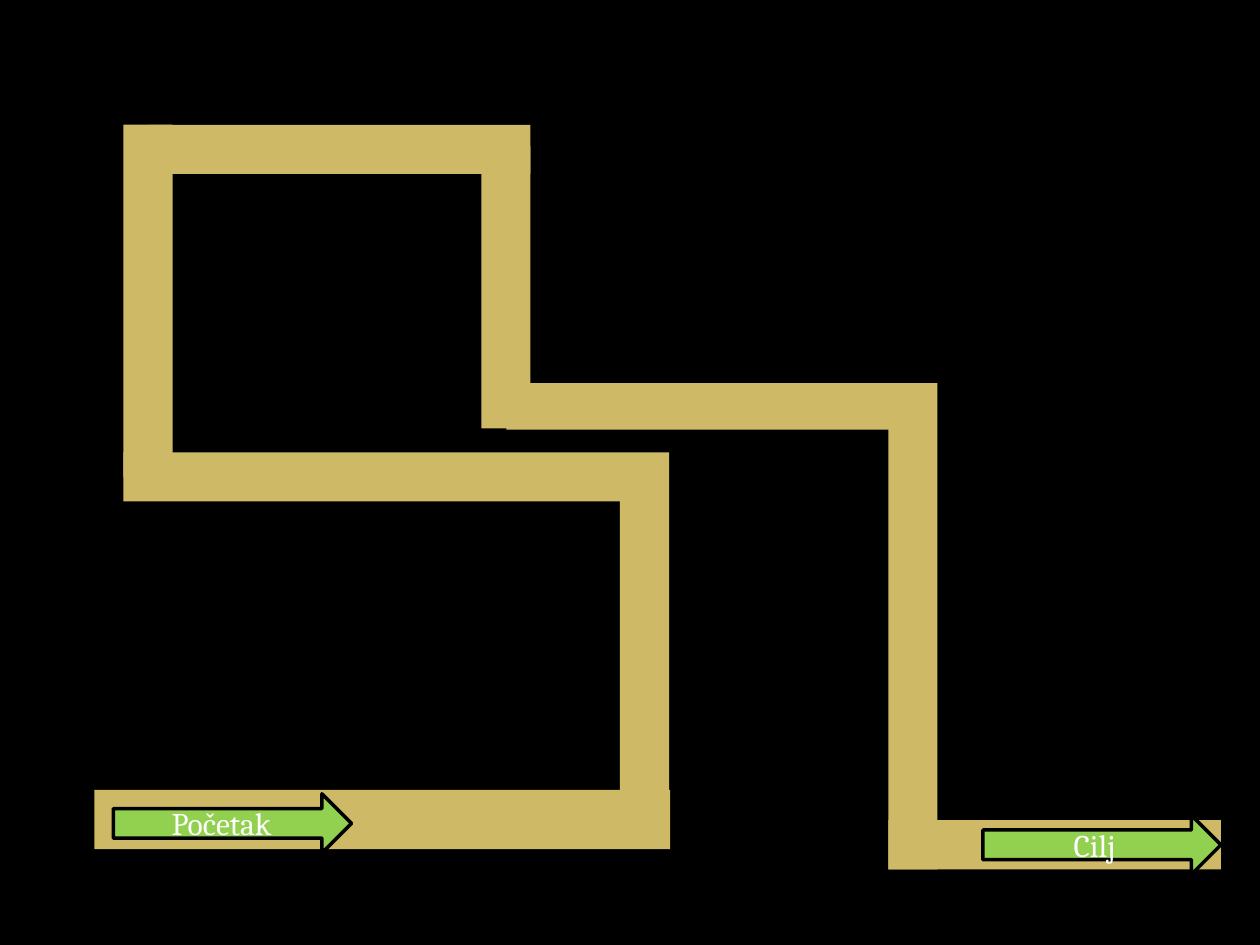
from pptx import Presentation
from pptx.dml.color import RGBColor
from pptx.enum.shapes import MSO_SHAPE
from pptx.enum.text import MSO_ANCHOR, PP_ALIGN
from pptx.util import Inches, Pt

RECT, ARROW = MSO_SHAPE.RECTANGLE, MSO_SHAPE.RIGHT_ARROW
MIDDLE, CENTER = MSO_ANCHOR.MIDDLE, PP_ALIGN.CENTER

BLACK = RGBColor(0x00, 0x00, 0x00)
WHITE = RGBColor(0xFF, 0xFF, 0xFF)
SAND = RGBColor(0xCE, 0xB9, 0x66)
GREEN = RGBColor(0x92, 0xD0, 0x50)

PATH_W = 0.39
ARROW_W, ARROW_H = 1.89, 0.47

# Maze corridors from start to goal: left, top, width, height in inches
CORRIDORS = [
    (0.75, 6.27, 4.57, 0.47),
    (4.92, 3.59, PATH_W, 2.99),
    (0.98, 3.59, 3.94, PATH_W),
    (0.98, 0.99, PATH_W, 2.8),
    (1.18, 0.99, 3.03, PATH_W),
    (3.82, 1.16, PATH_W, 2.24),
    (4.02, 3.04, 3.27, 0.37),
    (7.05, 3.04, PATH_W, 3.86),
    (7.05, 6.51, 2.64, PATH_W),
]
# Signs: text, left, top
SIGNS = [("Početak ", 0.9, 6.3), ("Cilj", 7.8, 6.47)]


def add_block(s, kind, box, color):
    sp = s.shapes.add_shape(kind, *map(Inches, box))
    sp.shadow.inherit = False
    sp.fill.solid()
    sp.fill.fore_color.rgb = color
    return sp


def add_sign(s, text, left, top):
    sp = add_block(s, ARROW, (left, top, ARROW_W, ARROW_H), GREEN)
    sp.line.color.rgb = BLACK
    sp.line.width = Pt(2)
    tf = sp.text_frame
    tf.text = text
    tf.vertical_anchor = MIDDLE
    p = tf.paragraphs[0]
    p.alignment = CENTER
    font = p.runs[0].font
    font.name, font.size = "Cambria", Pt(18)
    font.color.rgb = WHITE


def main():
    prs = Presentation()
    prs.slide_width, prs.slide_height = Inches(10), Inches(7.5)
    s = prs.slides.add_slide(prs.slide_layouts[6])
    s.background.fill.solid()
    s.background.fill.fore_color.rgb = BLACK

    # Maze
    for box in CORRIDORS:
        add_block(s, RECT, box, SAND).line.fill.background()

    # Start and goal signs
    for sign in SIGNS:
        add_sign(s, *sign)

    prs.save("out.pptx")


if __name__ == "__main__":
    main()
